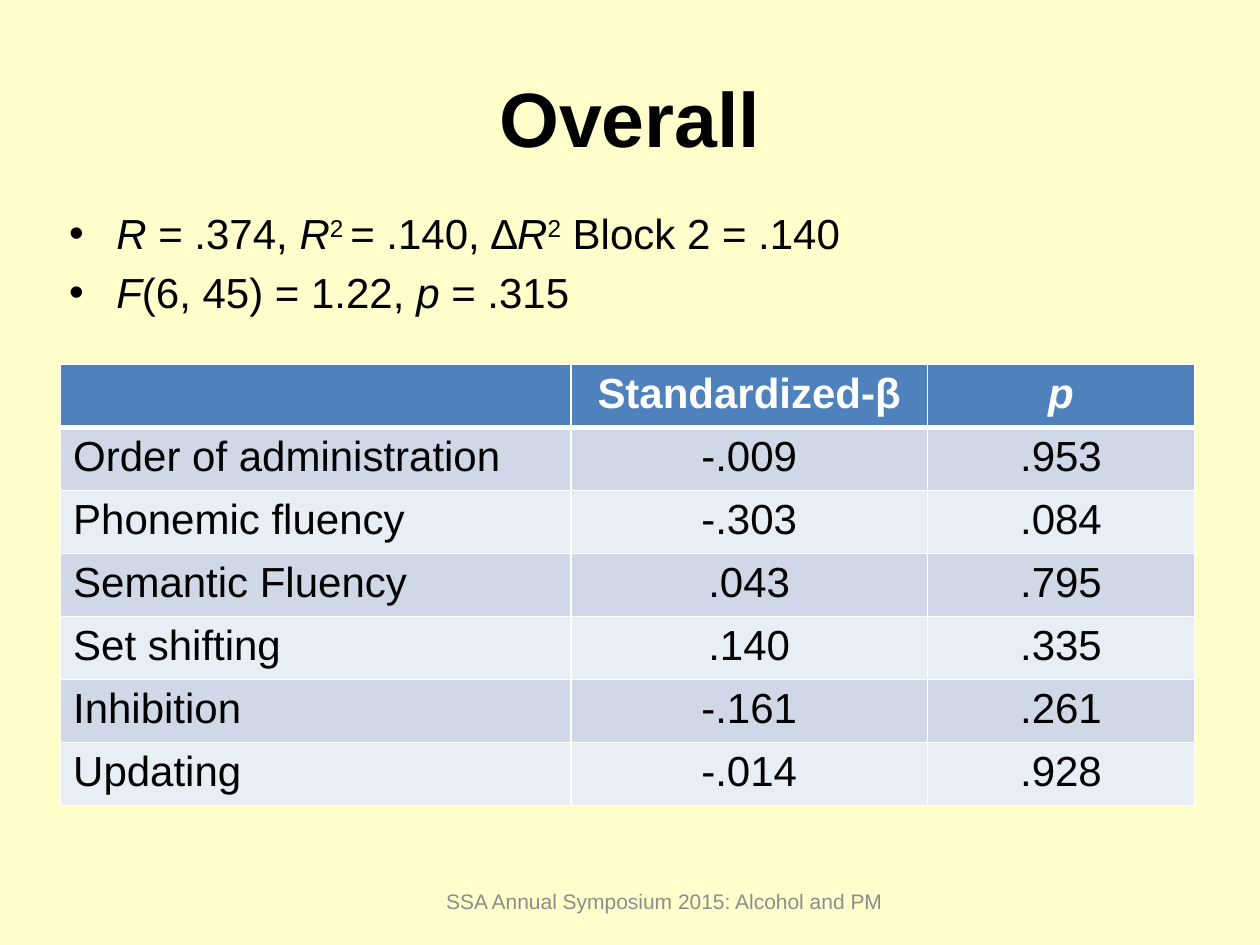
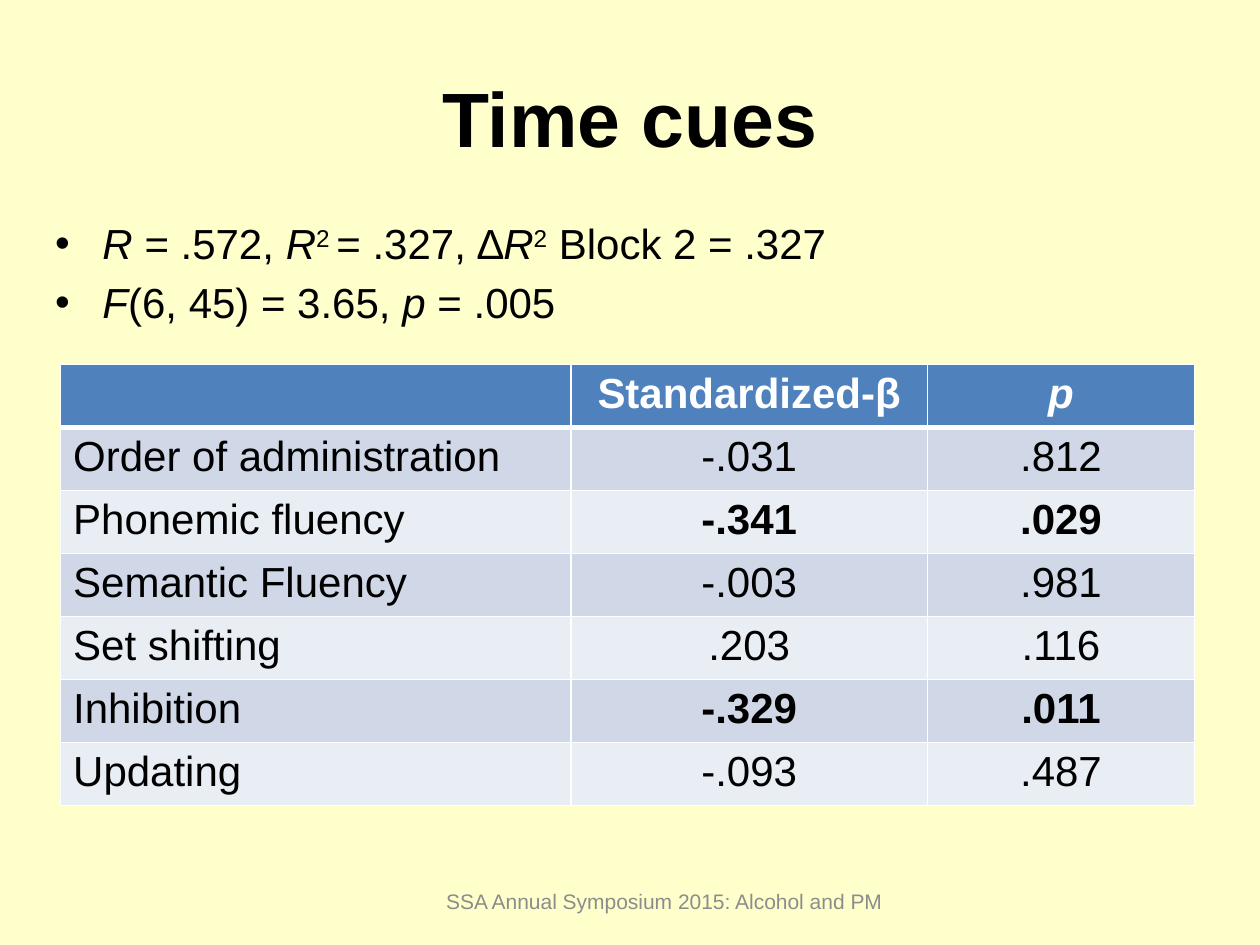
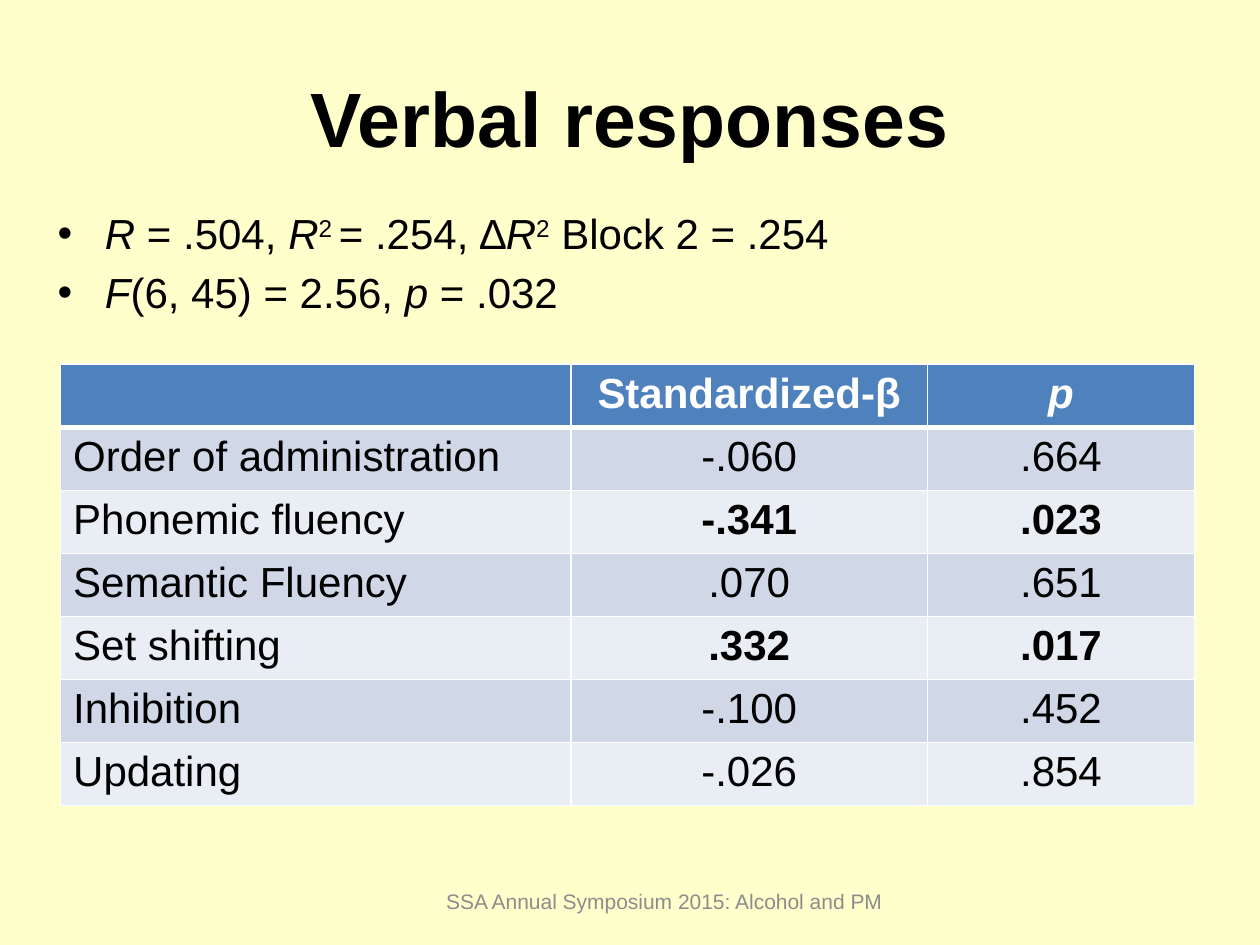
from lxml import etree
from pptx import Presentation
from pptx.dml.color import RGBColor
from pptx.enum.text import MSO_ANCHOR, PP_ALIGN
from pptx.oxml.ns import qn
from pptx.util import Pt

LEFT, CENTER = PP_ALIGN.LEFT, PP_ALIGN.CENTER
TOP, MIDDLE = MSO_ANCHOR.TOP, MSO_ANCHOR.MIDDLE

FOOTER = "SSA Annual Symposium 2015: Alcohol and PM"
MEASURES = ["Order of administration", "Phonemic fluency", "Semantic Fluency",
            "Set shifting", "Inhibition", "Updating"]
SIGNIFICANT = 0.05

# Title, bullet box (points), R, R squared, F, p, then (beta, p) per measure
RESULTS = [
    ("Overall", (32.4, 115.2, 643, 67.7), ".374", ".140", "1.22", ".315",
     [("-.009", ".953"), ("-.303", ".084"), (".043", ".795"),
      (".140", ".335"), ("-.161", ".261"), ("-.014", ".928")]),
    ("Time cues", (24.5, 121, 659.5, 62.6), ".572", ".327", "3.65", ".005",
     [("-.031", ".812"), ("-.341", ".029"), ("-.003", ".981"),
      (".203", ".116"), ("-.329", ".011"), ("-.093", ".487")]),
    ("Verbal responses", (25.9, 115.2, 659.5, 74.2), ".504", ".254", "2.56", ".032",
     [("-.060", ".664"), ("-.341", ".023"), (".070", ".651"),
      (".332", ".017"), ("-.100", ".452"), ("-.026", ".854")]),
]


def color(value):
    return RGBColor.from_string(value)


class Slides:
    """Holds the shared style and the current slide."""

    font = "Arial"
    paper, ink, muted, white = "FFFFCC", "000000", "8C8C8C", "FFFFFF"
    header, bands = "4F81BD", ("E9EDF4", "D0D8E8")
    title_size, body_size, footer_size = 44, 24, 12
    columns, row_height = (291.6, 203.8, 152.6), 29.5

    def __init__(self):
        self.deck = Presentation()
        self.deck.slide_width, self.deck.slide_height = Pt(720), Pt(540)
        self.page = None

    def new_page(self, title):
        self.page = self.deck.slides.add_slide(self.deck.slide_layouts[6])
        fill = self.page.background.fill
        fill.solid()
        fill.fore_color.rgb = color(self.paper)
        for text, place, size, ink, bold in (
                (title, (36, 21.6, 648, 90), self.title_size, self.ink, True),
                (FOOTER, (246.2, 500.4, 267, 28.8), self.footer_size, self.muted, False)):
            para = self.text_frame(place, MIDDLE).paragraphs[0]
            para.alignment = CENTER
            self.span(para, text, size, ink, bold)

    def text_frame(self, place, anchor):
        box = self.page.shapes.add_textbox(*map(Pt, place))
        frame = box.text_frame
        frame.word_wrap = True
        frame.vertical_anchor = anchor
        return frame

    def span(self, para, text, size=body_size, ink=ink, bold=False, italic=False, raised=False):
        span = para.add_run()
        span.text = text
        font = span.font
        font.name, font.size, font.bold, font.italic = self.font, Pt(size), bold, italic
        font.color.rgb = color(ink)
        if raised:
            span._r.get_or_add_rPr().set("baseline", "30000")

    def bullets(self, place, lines):
        frame = self.text_frame(place, TOP)
        for index, line in enumerate(lines):
            para = frame.add_paragraph() if index else frame.paragraphs[0]
            props = para._p.get_or_add_pPr()
            props.set("marL", str(Pt(27)))
            props.set("indent", str(-Pt(27)))
            before = etree.SubElement(props, qn("a:spcBef"))
            etree.SubElement(before, qn("a:spcPct")).set("val", "20000")
            etree.SubElement(props, qn("a:buFont")).set("typeface", self.font)
            etree.SubElement(props, qn("a:buChar")).set("char", "•")
            for text, style in line:
                self.span(para, text, italic=style == "italic", raised=style == "raised")

    def borders(self, cell, top, bottom):
        props = cell._tc.get_or_add_tcPr()
        for side, width in (("L", 1), ("R", 1), ("T", top), ("B", bottom)):
            line = etree.SubElement(props, qn("a:ln" + side), w=str(Pt(width)))
            fill = etree.SubElement(line, qn("a:solidFill"))
            etree.SubElement(fill, qn("a:srgbClr")).set("val", self.white)

    def cell(self, table, row, column, text, bold, italic=False):
        cell = table.cell(row, column)
        self.borders(cell, 3 if row == 1 else 1, 3 if row == 0 else 1)
        cell.fill.solid()
        cell.fill.fore_color.rgb = color(self.bands[row % 2] if row else self.header)
        if text:
            para = cell.text_frame.paragraphs[0]
            para.alignment = CENTER if column else LEFT
            self.span(para, text, ink=self.ink if row else self.white, bold=bold, italic=italic)

    def coefficients(self, values):
        count = len(values) + 1
        table = self.page.shapes.add_table(
            count, len(self.columns), Pt(34.6), Pt(208.1),
            Pt(sum(self.columns)), Pt(self.row_height * count)).table
        for column, width in zip(table.columns, self.columns):
            column.width = Pt(width)
        # Header row
        for column, text in enumerate(("", "Standardized-β", "p")):
            self.cell(table, 0, column, text, True, italic=text == "p")
        # One row per measure, significant values in bold
        for row, (measure, (beta, p)) in enumerate(zip(MEASURES, values), 1):
            strong = float(p) < SIGNIFICANT
            for column, text in enumerate((measure, beta, p)):
                self.cell(table, row, column, text, strong and column > 0)


def model_lines(r, r_squared, f, p):
    return [
        [("R ", "italic"), (f"= {r}, ", ""), ("R", "italic"), ("2 ", "raised"),
         (f"= {r_squared}, ∆", ""), ("R", "italic"), ("2", "raised"),
         (f" Block 2 = {r_squared}", "")],
        [("F", "italic"), (f"(6, 45) = {f}, ", ""), ("p", "italic"), (f" = {p}", "")],
    ]


def main():
    slides = Slides()
    for title, place, r, r_squared, f, p, values in RESULTS:
        slides.new_page(title)
        slides.bullets(place, model_lines(r, r_squared, f, p))
        slides.coefficients(values)
    slides.deck.save("out.pptx")


if __name__ == "__main__":
    main()
